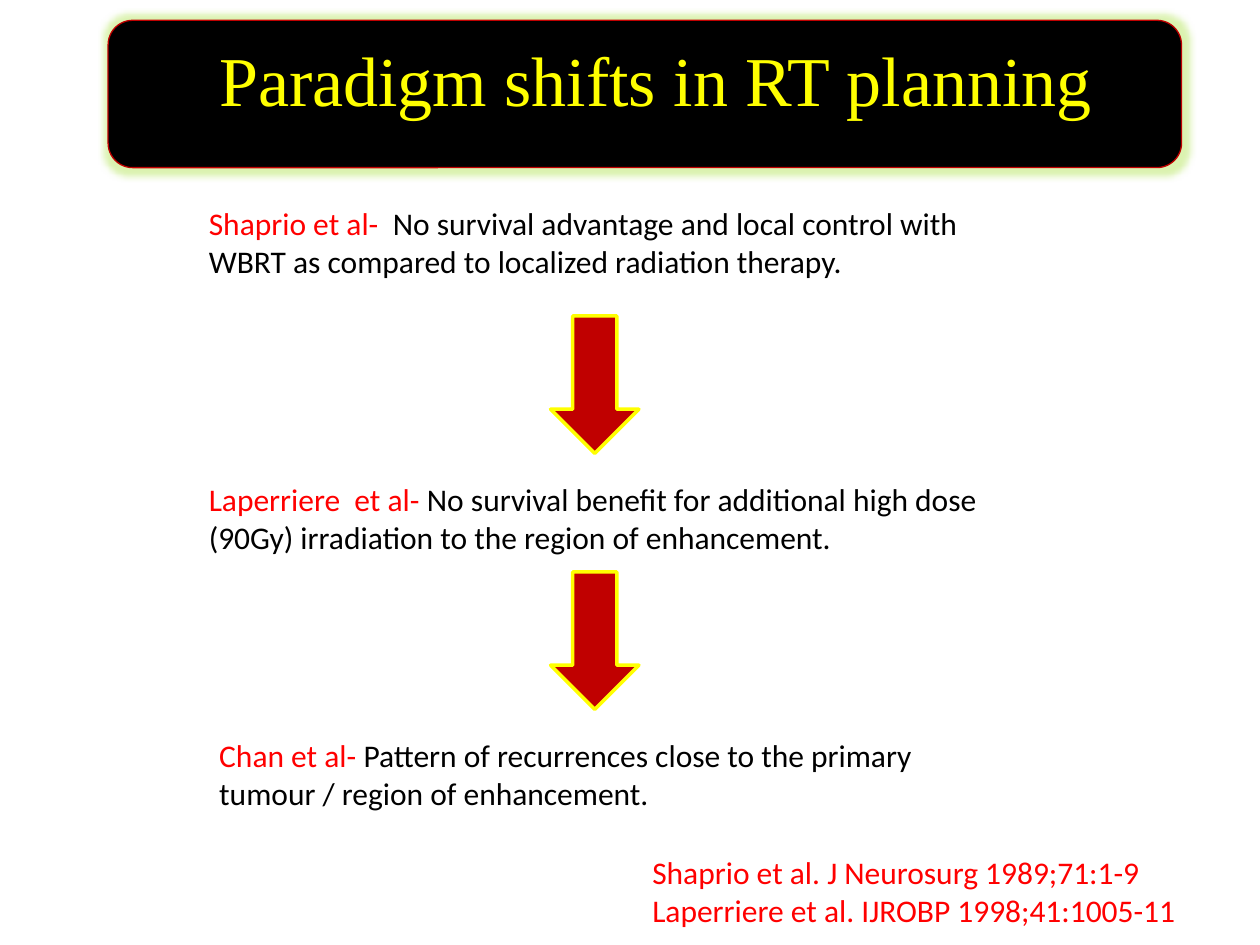
from lxml import etree
from pptx import Presentation
from pptx import util as u
from pptx.dml.color import RGBColor
from pptx.enum import shapes, text
from pptx.oxml.ns import qn

RED, DARK, BLACK, YELLOW, GREEN = "FF0000", "C00000", "000000", "FFFF00", "A6E03A"

# Studies: left, top, width, author, finding
STUDIES = [
    (3.96, 3.99, 16.28, "Shaprio et al-  ",
     "No survival advantage and local control with WBRT as compared to localized radiation therapy."),
    (3.96, 9.55, 16.08, "Laperriere  et al- ",
     "No survival benefit for additional high dose (90Gy) irradiation to the region of enhancement."),
    (4.17, 14.71, 15.88, "Chan et al- ",
     "Pattern of recurrences close to the primary tumour / region of enhancement."),
]
ARROWS = (6.37, 11.53)
SOURCES = ["Shaprio et al. J Neurosurg 1989;71:1-9",
           "Laperriere et al. IJROBP 1998;41:1005-11"]


def color(code):
    return RGBColor.from_string(code)


def style(font, size, name, code=None):
    font.size = u.Pt(size)
    font.name = name
    if code:
        font.color.rgb = color(code)


def add_shape(slide, kind, box, fill, line, width):
    shape = slide.shapes.add_shape(kind, *map(u.Cm, box))
    shape.shadow.inherit = False
    shape.fill.solid()
    shape.fill.fore_color.rgb = color(fill)
    shape.line.color.rgb = color(line)
    shape.line.width = u.Pt(width)
    return shape


def add_glow(shape, code, size, alpha):
    effects = shape.element.spPr.find(qn("a:effectLst"))
    glow = etree.SubElement(effects, qn("a:glow"), rad=str(u.Pt(size)))
    tint = etree.SubElement(glow, qn("a:srgbClr"), val=code)
    etree.SubElement(tint, qn("a:alpha"), val=str(alpha * 1000))


def add_text(slide, box, lines):
    """Each line is a list of (words, colour) runs."""
    frame = slide.shapes.add_textbox(*map(u.Cm, box)).text_frame
    frame.word_wrap = True
    frame.auto_size = text.MSO_AUTO_SIZE.SHAPE_TO_FIT_TEXT
    for i, line in enumerate(lines):
        para = frame.add_paragraph() if i else frame.paragraphs[0]
        style(para.font, 18, "Calibri")
        for words, code in line:
            run = para.add_run()
            run.text = words
            run.font.color.rgb = color(code)


def set_title(slide, words, banner):
    title = slide.shapes.title
    title.left, title.top, title.width, title.height = map(u.Cm, (2.84, 0, 20.75, 3.18))
    frame = title.text_frame
    frame.text = words
    frame.auto_size = text.MSO_AUTO_SIZE.NONE
    frame.vertical_anchor = text.MSO_ANCHOR.MIDDLE
    para = frame.paragraphs[0]
    para.alignment = text.PP_ALIGN.CENTER
    style(para.font, 40, "Times New Roman", YELLOW)
    banner.element.addnext(title.element)  # title in front of the banner


def main():
    deck = Presentation()
    deck.slide_width, deck.slide_height = u.Cm(25.4), u.Cm(19.05)
    slide = deck.slides.add_slide(deck.slide_layouts[5])

    # Banner and title
    kind = shapes.MSO_SHAPE
    banner = add_shape(slide, kind.ROUNDED_RECTANGLE, (2.18, 0.41, 21.64, 2.97),
                       BLACK, DARK, 0.75)
    add_glow(banner, GREEN, 8, 40)
    set_title(slide, "Paradigm shifts in RT planning", banner)

    # Chain of studies
    for left, top, width, author, finding in STUDIES:
        add_text(slide, (left, top, width, 1.8), [[(author, RED), (finding, BLACK)]])
    for top in ARROWS:
        add_shape(slide, kind.DOWN_ARROW, (11.1, top, 1.78, 2.77), DARK, YELLOW, 2)

    # Sources
    add_text(slide, (12.9, 17.07, 12.5, 1.8), [[(line, RED)] for line in SOURCES])

    deck.save("out.pptx")


if __name__ == "__main__":
    main()
